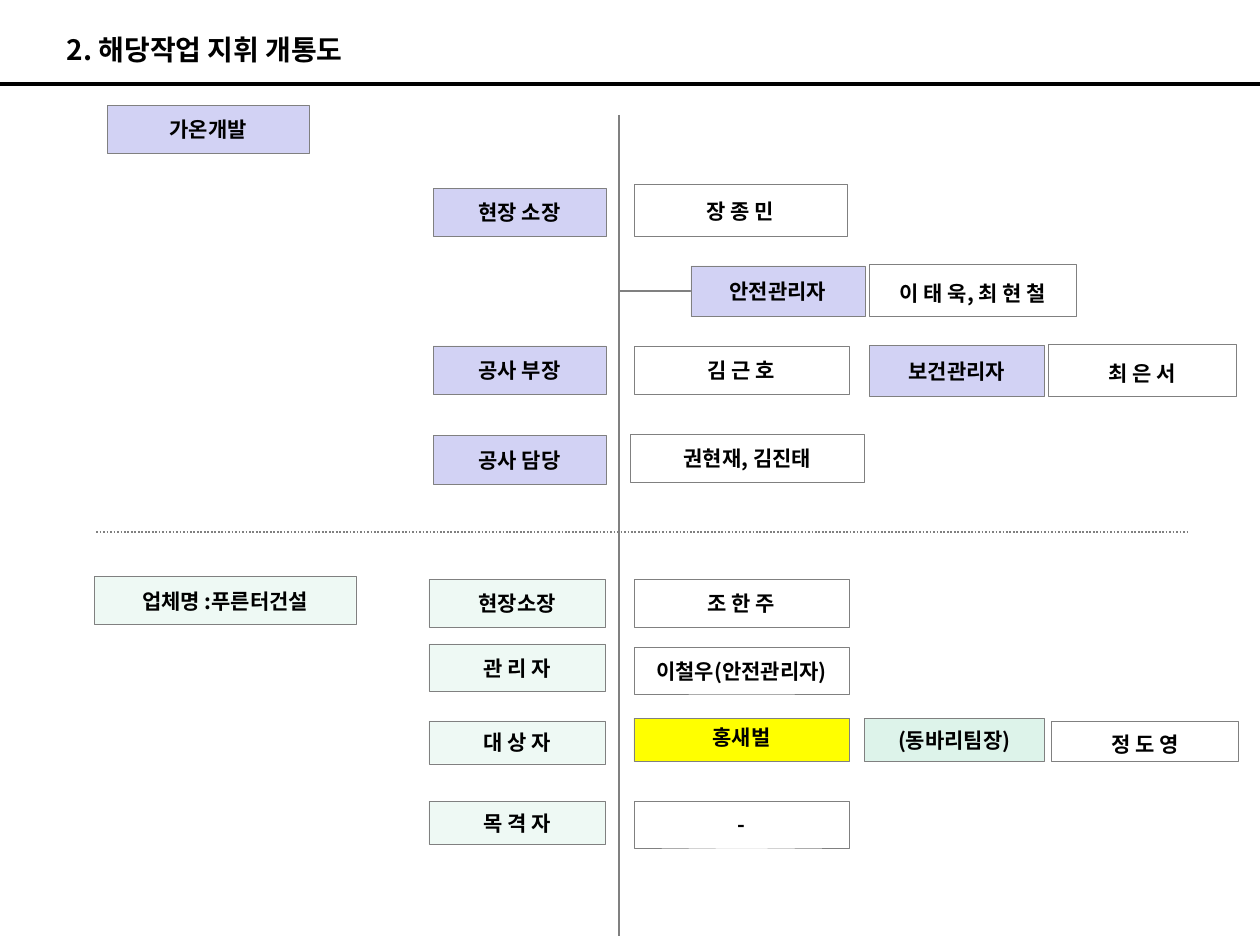
from dataclasses import dataclass

from lxml import etree
from pptx import Presentation
from pptx.dml.color import RGBColor
from pptx.enum.dml import MSO_LINE
from pptx.enum.shapes import MSO_CONNECTOR, MSO_SHAPE
from pptx.enum.text import MSO_ANCHOR, PP_ALIGN
from pptx.oxml.ns import qn
from pptx.util import Pt

RECT = MSO_SHAPE.RECTANGLE
STRAIGHT = MSO_CONNECTOR.STRAIGHT
DOTS = MSO_LINE.ROUND_DOT
LEFT, CENTER = PP_ALIGN.LEFT, PP_ALIGN.CENTER
TOP, MIDDLE = MSO_ANCHOR.TOP, MSO_ANCHOR.MIDDLE


@dataclass(frozen=True)
class Theme:
    font: str = "Noto Sans CJK KR"
    head: int = 16
    body: int = 12
    ink: str = "000000"
    gray: str = "808080"
    lilac: str = "D2D2F4"
    mint: str = "EEF9F4"
    green: str = "DDF3EA"
    yellow: str = "FFFF00"


THEME = Theme()

# Columns: left edge and width
ROLE = (247.5, 98.8)
CREW = (245, 101)
NAME = (362.2, 123)
SIDE = (497, 99.5)

# Boxes: text, column, top, height, fill, line spacing
BOXES = [
    ("가온개발", (61.2, 115.5), 60.3, 27.5, THEME.lilac, 1),
    ("현장 소장", ROLE, 107.7, 27.5, THEME.lilac, 1),
    ("장 종 민", (362.2, 122), 105.5, 29.8, None, 1),
    ("안전관리자", (394.8, 99.5), 152, 29, THEME.lilac, 1),
    ("이 태 욱, 최 현 철", (496.8, 118.5), 151.2, 29.8, None, 1.2),
    ("공사 부장", ROLE, 197.7, 27.5, THEME.lilac, 1),
    ("김 근 호", NAME, 197.8, 27.5, None, 1),
    ("보건관리자", SIDE, 197.3, 29, THEME.lilac, 1),
    ("최 은 서", (599, 107.2), 196.8, 29.4, None, 1.2),
    ("공사 담당", ROLE, 249, 27.5, THEME.lilac, 1),
    ("권현재, 김진태", (360, 134), 248.2, 27.5, None, 1),
    ("업체명 :푸른터건설", (54, 149.3), 329.5, 27.5, THEME.mint, 1),
    ("현장소장", CREW, 331, 27.3, THEME.mint, 1),
    ("조 한 주", NAME, 331, 27.3, None, 1),
    ("관 리 자", CREW, 368, 27, THEME.mint, 1),
    ("이철우(안전관리자)", NAME, 369.8, 26.8, None, 1),
    ("대 상 자", CREW, 412, 24.5, THEME.mint, 1),
    ("홍새벌", NAME, 410.4, 24.8, THEME.yellow, 0.8),
    ("(동바리팀장)", (493.8, 103), 410.4, 24.8, THEME.green, 1),
    ("정 도 영", (600.6, 107.2), 412, 23.2, None, 1.2),
    ("목 격 자", CREW, 457.8, 24.8, THEME.mint, 1),
    ("-", NAME, 457.8, 26.7, None, 1),
]

# Lines: start, end, colour, width, dash
LINES = [
    ((0, 48), (720, 48), THEME.ink, 2.25, None),
    ((55, 304), (680, 304), THEME.gray, 1, DOTS),
    ((353.8, 65.7), (353.8, 535), THEME.gray, 1, None),
    ((353.8, 166.3), (394.8, 166.3), THEME.gray, 0.75, None),
]


def tint(hue):
    return RGBColor.from_string(hue)


def write(shape, text, size=THEME.body, align=CENTER, anchor=MIDDLE, space=1, inset=3.6):
    frame = shape.text_frame
    frame.word_wrap = True
    frame.vertical_anchor = anchor
    frame.margin_left = frame.margin_right = Pt(inset)
    para = frame.paragraphs[0]
    para.alignment = align
    para.line_spacing = space
    run = para.add_run()
    run.text = text
    font = run.font
    font.name, font.size, font.bold = THEME.font, Pt(size), True
    font.color.rgb = tint(THEME.ink)
    # Korean glyphs follow the East Asian typeface
    east = etree.SubElement(font._element, qn("a:ea"))
    east.set("typeface", THEME.font)


def add_title(slide, text):
    title = slide.shapes.title
    title.left, title.top, title.width, title.height = Pt(31), Pt(15), Pt(300), Pt(27)
    write(title, text, size=THEME.head, align=LEFT, anchor=TOP, inset=7.2)


def add_box(slide, text, col, top, high, fill, space):
    left, wide = col
    box = slide.shapes.add_shape(RECT, Pt(left), Pt(top), Pt(wide), Pt(high))
    box.shadow.inherit = False
    if fill:
        box.fill.solid()
        box.fill.fore_color.rgb = tint(fill)
    else:
        box.fill.background()
    box.line.color.rgb = tint(THEME.gray)
    box.line.width = Pt(0.25)
    write(box, text, space=space)


def add_line(slide, start, end, hue, width, dash):
    line = slide.shapes.add_connector(STRAIGHT, *map(Pt, start + end))
    line.line.color.rgb = tint(hue)
    line.line.width = Pt(width)
    if dash:
        line.line.dash_style = dash
    etree.SubElement(line._element.spPr, qn("a:effectLst"))


def main():
    deck = Presentation()
    deck.slide_width, deck.slide_height = Pt(720), Pt(540)
    slide = deck.slides.add_slide(deck.slide_layouts[5])
    add_title(slide, "2. 해당작업 지휘 개통도")
    for line in LINES:
        add_line(slide, *line)
    for box in BOXES:
        add_box(slide, *box)
    deck.save("out.pptx")


if __name__ == "__main__":
    main()
